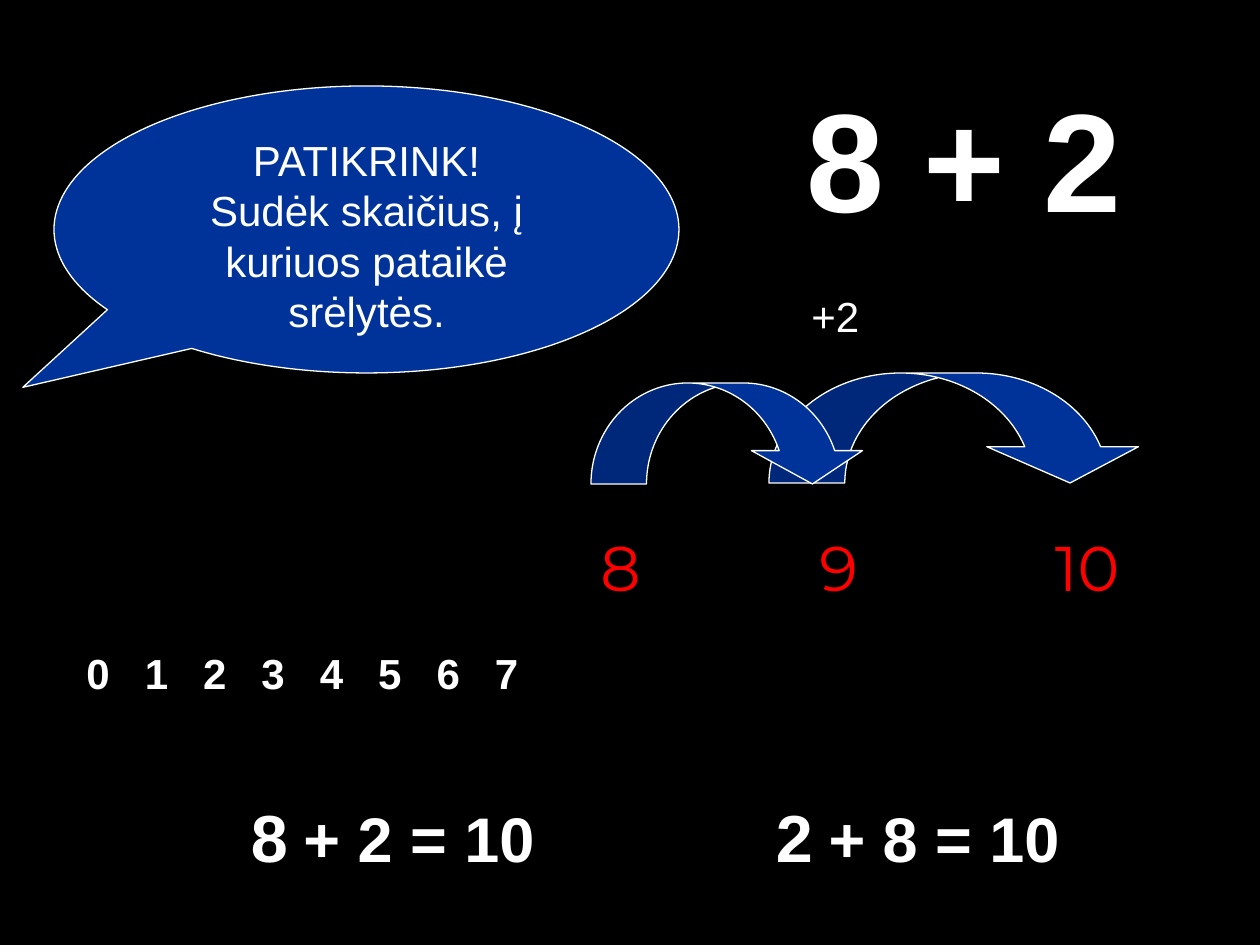
from pptx import Presentation
from pptx.dml.color import RGBColor
from pptx.enum.shapes import MSO_SHAPE
from pptx.enum.text import MSO_ANCHOR, MSO_AUTO_SIZE, PP_ALIGN
from pptx.oxml.ns import qn
from pptx.util import Pt
from lxml import etree

SCALE = 914400 / 126
LEFT, MID = PP_ALIGN.LEFT, PP_ALIGN.CENTER
TOP = MSO_ANCHOR.TOP
NOFIT = MSO_AUTO_SIZE.NONE
ARROW = MSO_SHAPE.CURVED_DOWN_ARROW
BUBBLE = MSO_SHAPE.OVAL_CALLOUT
HUES = {"back": "000000", "text": "FFFFFF", "blue": "003399", "red": "FF0000"}


def px(size):
    """Turn pixels into EMU."""
    return round(size * SCALE)


def hue(name):
    """Look up a colour by name."""
    return RGBColor.from_string(HUES[name])


def style(run, size, bold=False, face="Arial", tint="text"):
    """Format one run."""
    font = run.font
    font.size, font.bold, font.name = Pt(size), bold, face
    font.color.rgb = hue(tint)


def write(shape, text, size, align=LEFT, wrap=True, **look):
    """Put top-anchored text into a shape."""
    frame = shape.text_frame
    frame.text = text
    frame.word_wrap, frame.auto_size = wrap, NOFIT
    frame.vertical_anchor = TOP
    for para in frame.paragraphs:
        para.alignment = align
        for run in para.runs:
            style(run, size, **look)
    return frame


def label(slide, box, text, size, **look):
    """Add a text box."""
    shape = slide.shapes.add_textbox(*map(px, box))
    return write(shape, text, size, **look)


def sum_box(slide, left, first, rest):
    """Add an equation with a larger first digit."""
    frame = label(slide, (left, 790, 328, 92), first, 38, bold=True)
    frame.margin_left = px(28)
    para = frame.paragraphs[0]
    for text, size in ((" ", 32), (rest, 36)):
        run = para.add_run()
        run.text = text
        style(run, size, bold=True)


def figure(slide, kind, box, adjust):
    """Add a blue preset shape with a thin white line."""
    shape = slide.shapes.add_shape(kind, *map(px, box))
    shape.shadow.inherit = False
    shape.fill.solid()
    shape.fill.fore_color.rgb = hue("blue")
    shape.line.color.rgb = hue("text")
    shape.line.width = Pt(0.75)
    for spot, value in enumerate(adjust):
        shape.adjustments[spot] = value
    return shape


def digits(slide):
    """Add the row of numbers on equal tab stops."""
    row = range(8)
    frame = label(slide, (74, 641, 486, 63), "\t".join(map(str, row)), 24, bold=True)
    props = frame.paragraphs[0]._p.get_or_add_pPr()
    tabs = etree.SubElement(props, qn("a:tabLst"))
    for step in row[1:]:
        etree.SubElement(tabs, qn("a:tab"), pos=str(px(58.35 * step)), algn="l")


def heading(slide):
    """Place the large sum in the title."""
    title = slide.shapes.title
    title.left, title.top, title.width, title.height = map(px, (779, 66, 407, 180))
    frame = write(title, "8 + 2", 80, bold=True)
    frame.margin_left = px(28)


def main():
    """Build the slide."""
    deck = Presentation()
    deck.slide_width, deck.slide_height = px(1260), px(945)
    slide = deck.slides.add_slide(deck.slide_layouts[5])
    slide.background.fill.solid()
    slide.background.fill.fore_color.rgb = hue("back")
    heading(slide)
    digits(slide)
    for left, width, text in ((581, 79, "8"), (799, 79, "9"), (1027, 120, "10")):
        label(slide, (left, 522, width, 200), text, 36, align=MID, wrap=False,
              face="Montserrat", tint="red")
    figure(slide, ARROW, (769, 373, 377, 110), (0.69, 1.38, 0.33))
    figure(slide, ARROW, (591, 383, 277, 101), (0.55, 1.1, 0.33))
    bubble = figure(slide, BUBBLE, (54, 86, 625, 287), (-0.55, 0.55))
    write(bubble, "PATIKRINK!\nSudėk skaičius, į kuriuos pataikė srėlytės.", 24, align=MID)
    sum_box(slide, 748, "2", "+ 8 = 10")
    sum_box(slide, 223, "8", "+ 2 = 10")
    label(slide, (799, 284, 110, 63), "+2", 24)
    deck.save("out.pptx")


if __name__ == "__main__":
    main()
